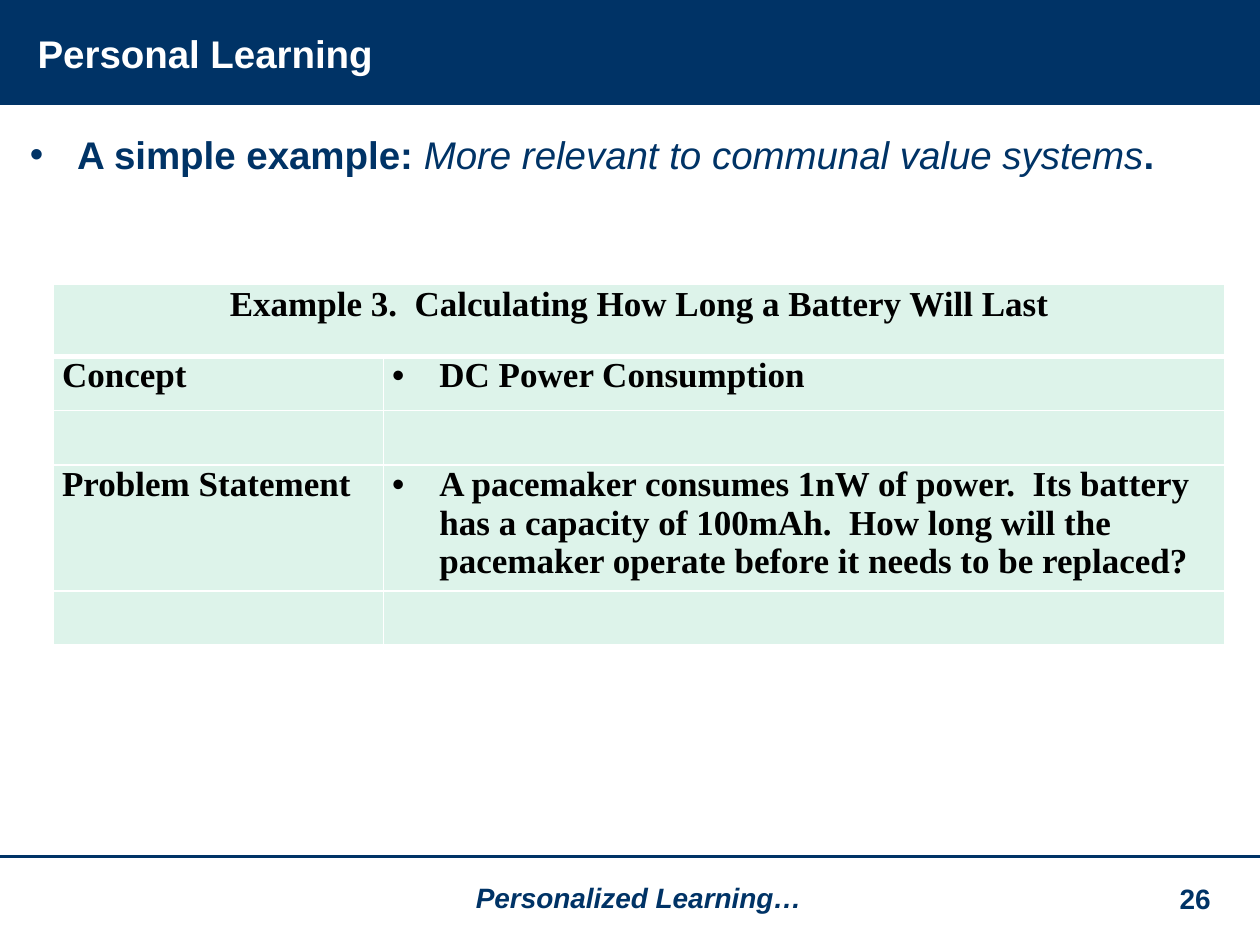
from lxml import etree
from pptx import Presentation
from pptx.dml.color import RGBColor
from pptx.enum.shapes import MSO_CONNECTOR, MSO_SHAPE
from pptx.enum.text import MSO_ANCHOR, PP_ALIGN
from pptx.oxml import parse_xml
from pptx.oxml.ns import nsdecls, qn
from pptx.util import Pt

LEFT, CENTER = PP_ALIGN.LEFT, PP_ALIGN.CENTER
TOP, MIDDLE = MSO_ANCHOR.TOP, MSO_ANCHOR.MIDDLE
NAVY, WHITE, BLACK, MINT = "003366", "FFFFFF", "000000", "DDF3EA"


def color(value):
    return RGBColor.from_string(value)


def write(text_frame, runs, font_format, alignment=LEFT, indent=0, bullet=False):
    """Fill the first paragraph with (text, overrides) runs and a hanging indent."""
    paragraph = text_frame.paragraphs[0]
    paragraph.alignment = alignment
    properties = paragraph._p.get_or_add_pPr()
    properties.set("marL", str(Pt(indent)))
    properties.set("indent", str(-Pt(indent)))
    if bullet:
        etree.SubElement(properties, qn("a:buFont")).set("typeface", "Arial")
        etree.SubElement(properties, qn("a:buChar")).set("char", "•")
    for text, overrides in runs:
        run = paragraph.add_run()
        run.text = text
        values = {**font_format, **overrides}
        run.font.color.rgb = color(values.pop("color"))
        for name, value in values.items():
            setattr(run.font, name, value)


presentation = Presentation()
presentation.slide_width, presentation.slide_height = Pt(720), Pt(540)
slide = presentation.slides.add_slide(presentation.slide_layouts[6])

# Header band and footer rule
band = slide.shapes.add_shape(MSO_SHAPE.RECTANGLE, 0, 0, Pt(720), Pt(60))
band.shadow.inherit = False
band.fill.solid()
band.fill.fore_color.rgb = color(NAVY)
band.line.fill.background()

rule = slide.shapes.add_connector(MSO_CONNECTOR.STRAIGHT, 0, Pt(489.5), Pt(720), Pt(489.5))
rule.line.color.rgb = color(NAVY)
rule.line.width = Pt(2)
etree.SubElement(rule._element.spPr, qn("a:effectLst"))

# Title, body and footer texts
heading = {"name": "Arial", "size": Pt(22), "bold": True, "italic": False, "color": NAVY}
footer = {**heading, "size": Pt(16)}
body_runs = [
    ("A simple example: ", {}),
    ("More relevant to communal value systems", {"bold": False, "italic": True}),
    (".", {}),
]
text_boxes = [
    ((14.4, 15.1, 432.7, 30.2), MIDDLE, [("Personal Learning", {"color": WHITE})], heading, {}),
    ((10, 71.3, 700, 406.8), TOP, body_runs, heading, {"indent": 27, "bullet": True}),
    ((172.8, 499.7, 384.5, 26.6), TOP, [("Personalized Learning…", {"italic": True})], footer,
     {"alignment": CENTER}),
    ((657.4, 500.4, 51.1, 26.6), TOP, [("26", {})], footer, {"alignment": CENTER}),
]
for box, anchor, runs, font_format, layout in text_boxes:
    text_frame = slide.shapes.add_textbox(*map(Pt, box)).text_frame
    text_frame.word_wrap = True
    text_frame.vertical_anchor = anchor
    write(text_frame, runs, font_format, **layout)

# Example table
column_widths = [188.6, 481]
row_heights = [41, 31, 31, 62, 31]
table = slide.shapes.add_table(
    len(row_heights), len(column_widths), Pt(30.5), Pt(162.7),
    Pt(sum(column_widths)), Pt(sum(row_heights))).table
table.first_row = table.horz_banding = False
for column, width in zip(table.columns, column_widths):
    column.width = Pt(width)
for row, height in zip(table.rows, row_heights):
    row.height = Pt(height)
table.cell(0, 0).merge(table.cell(0, 1))

for row_index in range(len(row_heights)):
    for column_index in range(len(column_widths)):
        cell = table.cell(row_index, column_index)
        cell.margin_left = cell.margin_right = Pt(5)
        cell.margin_top = cell.margin_bottom = 0
        for side in "LRTB":
            under_header = (row_index, side) in [(0, "B"), (1, "T")]
            cell._tc.get_or_add_tcPr().append(parse_xml(
                f'<a:ln{side} {nsdecls("a")} w="{Pt(3 if under_header else 1)}">'
                f'<a:solidFill><a:srgbClr val="{WHITE}"/></a:solidFill></a:ln{side}>'))
        cell.fill.solid()
        cell.fill.fore_color.rgb = color(MINT)

table_font = {"name": "Times New Roman", "size": Pt(20), "bold": True, "color": BLACK}
cell_texts = [
    (0, 0, "Example 3.  Calculating How Long a Battery Will Last", {"alignment": CENTER}),
    (1, 0, "Concept", {"indent": 58}),
    (1, 1, "DC Power Consumption", {"indent": 27, "bullet": True}),
    (3, 0, "Problem Statement", {"indent": 16.5}),
    (3, 1, "A pacemaker consumes 1nW of power.  Its battery has a capacity of 100mAh.  "
           "How long will the pacemaker operate before it needs to be replaced?",
     {"indent": 27, "bullet": True}),
]
for row_index, column_index, text, layout in cell_texts:
    write(table.cell(row_index, column_index).text_frame, [(text, {})], table_font, **layout)

presentation.save("out.pptx")
